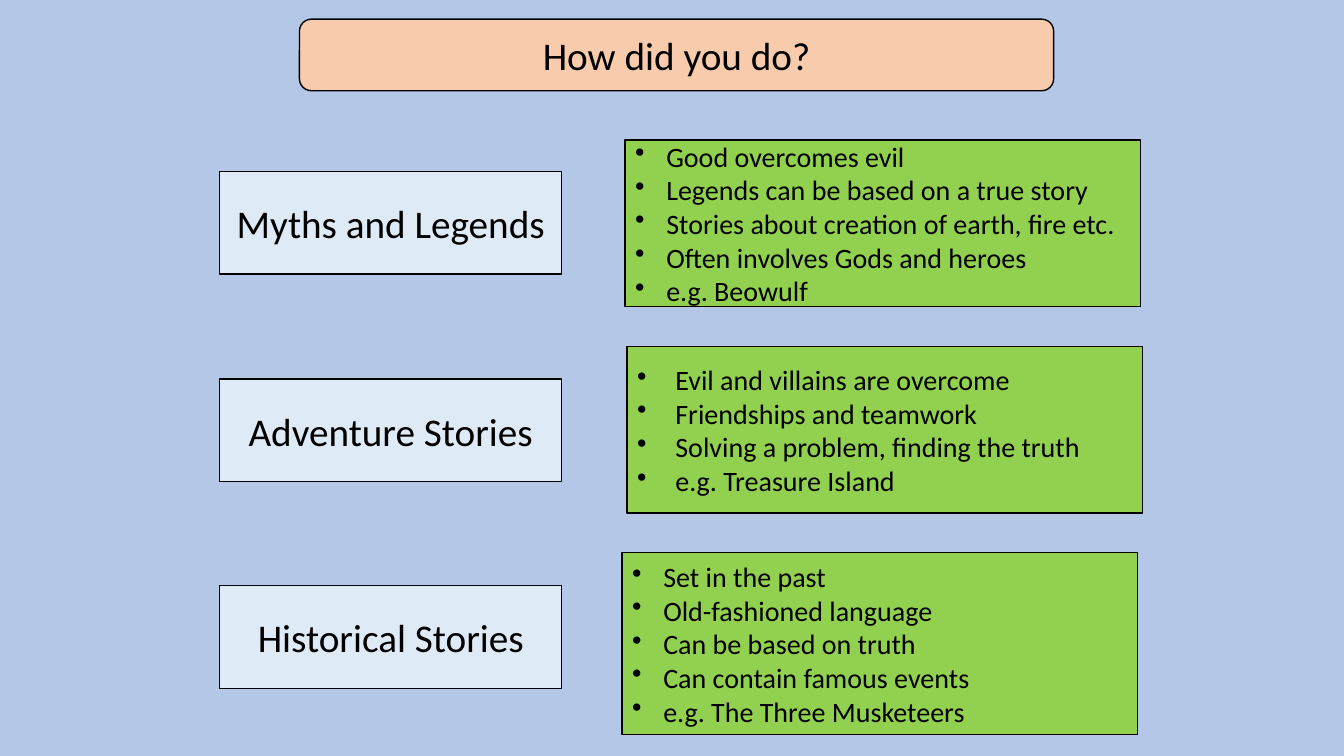
from lxml import etree
from pptx import Presentation
from pptx.dml.color import RGBColor
from pptx.enum.shapes import MSO_SHAPE
from pptx.enum.text import MSO_ANCHOR, PP_ALIGN
from pptx.oxml.ns import qn
from pptx.util import Inches, Pt

TITLE = "How did you do?"
# genre, label top, (left, top, height) of the features box, bullet indent, features
GENRES = [
    ("Myths and Legends", 1.7, (6.2, 1.39, 1.65), 0.31, [
        "Good overcomes evil",
        "Legends can be based on a true story",
        "Stories about creation of earth, fire etc.",
        "Often involves Gods and heroes",
        "e.g. Beowulf",
    ]),
    ("Adventure Stories", 3.76, (6.22, 3.44, 1.65), 0.38, [
        "Evil and villains are overcome",
        "Friendships and teamwork",
        "Solving a problem, finding the truth",
        "e.g. Treasure Island",
    ]),
    ("Historical Stories", 5.81, (6.17, 5.48, 1.81), 0.31, [
        "Set in the past",
        "Old-fashioned language",
        "Can be based on truth",
        "Can contain famous events",
        "e.g. The Three Musketeers",
    ]),
]
LABEL_LEFT, LABEL_WIDTH, LABEL_HEIGHT = 2.18, 3.39, 1.02
FEATURES_WIDTH = 5.11

BLACK = RGBColor(0x00, 0x00, 0x00)
BLUE = RGBColor(0xB4, 0xC7, 0xE7)
PEACH = RGBColor(0xF8, 0xCB, 0xAD)
GREEN = RGBColor(0x92, 0xD0, 0x50)
PALE_BLUE = RGBColor(0xDE, 0xEB, 0xF7)
RECTANGLE = MSO_SHAPE.RECTANGLE
ROUNDED = MSO_SHAPE.ROUNDED_RECTANGLE
MIDDLE = MSO_ANCHOR.MIDDLE
LEFT, CENTER = PP_ALIGN.LEFT, PP_ALIGN.CENTER


def add_box(page, kind, bounds, fill, lines, size, align):
    box = page.shapes.add_shape(kind, *map(Inches, bounds))
    box.shadow.inherit = False
    box.fill.solid()
    box.fill.fore_color.rgb = fill
    box.line.color.rgb = BLACK
    box.line.width = Pt(1)
    frame = box.text_frame
    frame.word_wrap = True
    frame.vertical_anchor = MIDDLE
    for index, line in enumerate(lines):
        para = frame.add_paragraph() if index else frame.paragraphs[0]
        para.text = line
        para.alignment = align
        para.font.name = "Calibri"
        para.font.size = Pt(size)
        para.font.color.rgb = BLACK
    return box


def add_bullets(box, indent):
    for para in box.text_frame.paragraphs:
        properties = para._p.get_or_add_pPr()
        properties.set("marL", str(Inches(indent)))
        properties.set("indent", str(-Inches(indent)))
        bullet = etree.Element(qn("a:buChar"), char="•")
        properties.insert(0, bullet)


def main():
    deck = Presentation()
    deck.slide_width, deck.slide_height = Inches(13.33), Inches(7.5)
    page = deck.slides.add_slide(deck.slide_layouts[6])
    page.background.fill.solid()
    page.background.fill.fore_color.rgb = BLUE

    add_box(page, ROUNDED, (2.97, 0.19, 7.48, 0.71), PEACH, [TITLE], 28, CENTER)
    for genre, label_top, (left, top, height), indent, features in GENRES:
        features_box = add_box(page, RECTANGLE, (left, top, FEATURES_WIDTH, height),
                               GREEN, features, 20, LEFT)
        add_bullets(features_box, indent)
        add_box(page, RECTANGLE, (LABEL_LEFT, label_top, LABEL_WIDTH, LABEL_HEIGHT),
                PALE_BLUE, [genre], 28, CENTER)
    deck.save("out.pptx")


if __name__ == "__main__":
    main()
